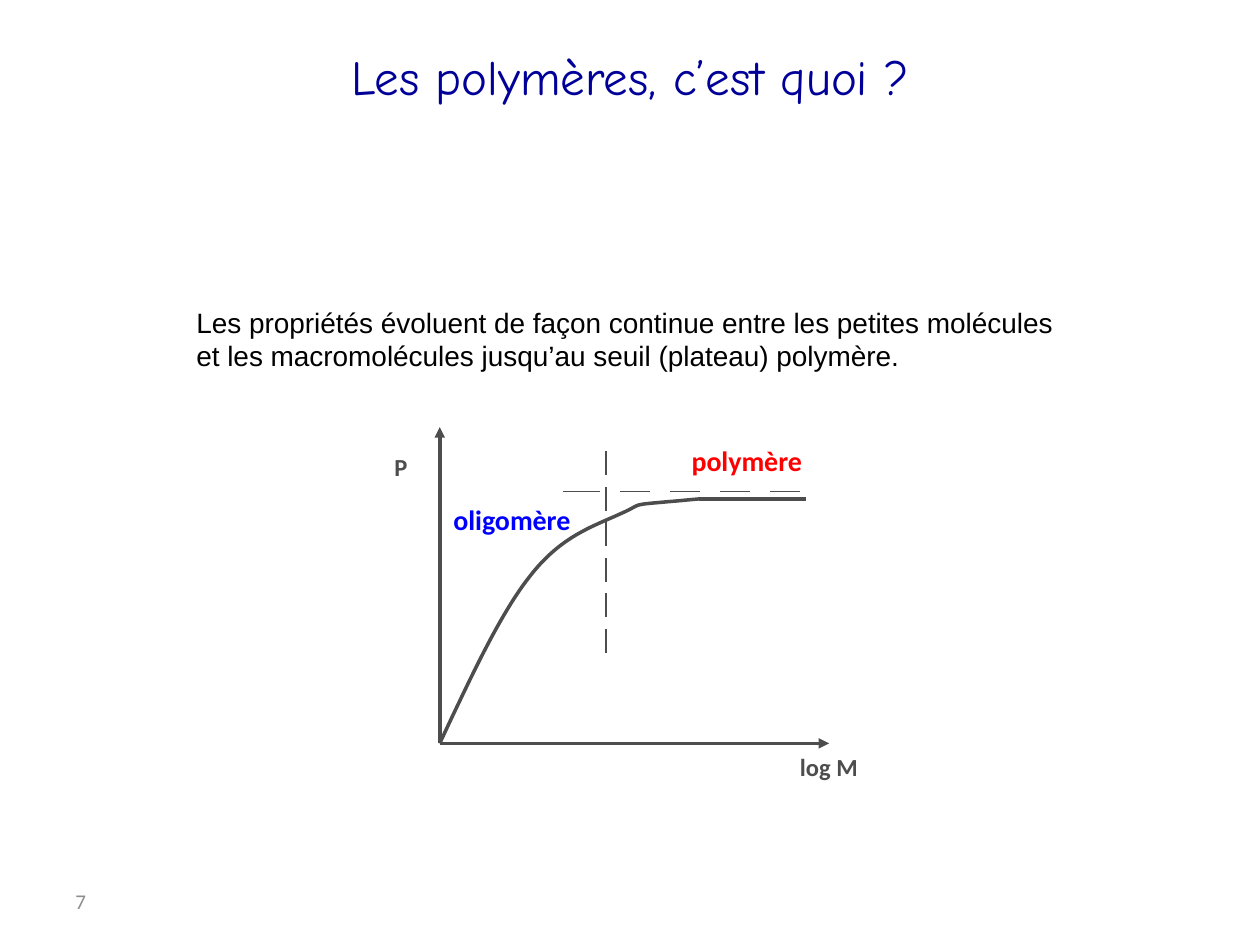
from dataclasses import dataclass

from lxml import etree
from pptx import Presentation
from pptx.dml.color import RGBColor
from pptx.enum import shapes, text
from pptx.oxml import ns
from pptx.util import Pt


@dataclass(frozen=True)
class Theme:
    gray = RGBColor(0x4D, 0x4D, 0x4D)
    pale = RGBColor(0x8C, 0x8C, 0x8C)
    navy = RGBColor(0x00, 0x00, 0x99)
    blue = RGBColor(0x00, 0x00, 0xFF)
    red = RGBColor(0xFF, 0x00, 0x00)
    black = RGBColor(0x00, 0x00, 0x00)
    title_size = Pt(28)
    body_size = Pt(16)
    axis_size = Pt(14)
    number_size = Pt(12)
    thick = Pt(2)
    thin = Pt(0.75)


THEME = Theme()
ORIGIN = (251.3, 424.8)
PLATEAU_START = (399.6, 285.1)
CURVE = [  # two control points and an end point per Bézier segment
    ((268.6, 388.1), (285.8, 350.6), (303.1, 329)),
    ((320.4, 306.7), (338.4, 301), (354.2, 293.8)),
    ((370.8, 286.6), (354.2, 289.4), PLATEAU_START),
]


def set_all(target, values):
    for name, value in values.items():
        setattr(target, name, value)


def format_text(box, words, size, color, font="Calibri", bold=False,
                align=text.PP_ALIGN.LEFT, anchor=text.MSO_ANCHOR.TOP, wrap=True):
    frame = box.text_frame
    set_all(frame, {
        "word_wrap": wrap, "vertical_anchor": anchor, "auto_size": text.MSO_AUTO_SIZE.NONE,
        "margin_left": Pt(7.2), "margin_right": Pt(7.2),
        "margin_top": Pt(3.6), "margin_bottom": Pt(3.6)})
    para = frame.paragraphs[0]
    para.alignment = align
    span = para.add_run()
    span.text = words
    set_all(span.font, {"size": size, "name": font, "bold": bold})
    span.font.color.rgb = color


def add_text(page, area, words, size, color, **options):
    box = page.shapes.add_textbox(*map(Pt, area))
    format_text(box, words, size, color, **options)


def add_title(page, area, words):
    title = page.shapes.title
    set_all(title, dict(zip(("left", "top", "width", "height"), map(Pt, area))))
    format_text(title, words, THEME.title_size, THEME.navy, font="Comic Neue",
                align=text.PP_ALIGN.CENTER, anchor=text.MSO_ANCHOR.MIDDLE)


def add_line(page, start, end, width, arrow=False):
    line = page.shapes.add_connector(shapes.MSO_CONNECTOR.STRAIGHT, *map(Pt, start + end))
    line.line.color.rgb = THEME.gray
    line.line.width = width
    if arrow:
        etree.SubElement(line.line._get_or_add_ln(), ns.qn("a:tailEnd"), type="triangle")
    etree.SubElement(line._element.spPr, ns.qn("a:effectLst"))


def bezier_points(start, segments, steps=24):
    for first, second, end in segments:
        corners = (start, first, second, end)
        for step in range(1, steps + 1):
            t = step / steps
            weights = ((1 - t) ** 3, 3 * t * (1 - t) ** 2, 3 * t * t * (1 - t), t ** 3)
            yield tuple(Pt(sum(w * corner[axis] for w, corner in zip(weights, corners)))
                        for axis in (0, 1))
        start = end


def add_curve(page, start, segments):
    builder = page.shapes.build_freeform(*map(Pt, start))
    builder.add_line_segments(bezier_points(start, segments), close=False)
    curve = builder.convert_to_shape()
    curve.shadow.inherit = False
    curve.fill.background()
    curve.line.color.rgb = THEME.gray
    curve.line.width = THEME.thick


def add_graph(page):
    # Axes
    for end in ((ORIGIN[0], 244.1), (473.8, ORIGIN[1])):
        add_line(page, ORIGIN, end, THEME.thick, arrow=True)

    # Property curve and its plateau
    add_curve(page, ORIGIN, CURVE)
    add_line(page, PLATEAU_START, (460.8, PLATEAU_START[1]), THEME.thick)

    # Dashed guides: plateau level and polymer threshold
    add_line(page, (321.8, 280.8), (342.7, 280.8), THEME.thin)
    for index in range(4):
        left = 354.2 + 28.6 * index
        add_line(page, (left, 280.8), (left + 17, 280.8), THEME.thin)
    for index in range(6):
        top = 257.8 + 20.3 * index
        add_line(page, (346.3, top), (346.3, top + 13.7), THEME.thin)

    # Labels
    for words, area, size, color in (
            ("oligomère", (252, 283.7, 85, 26.6), THEME.body_size, THEME.blue),
            ("polymère", (388.1, 249.8, 78.5, 26.6), THEME.body_size, THEME.red),
            ("P", (218.2, 254.9, 23, 23.8), THEME.axis_size, THEME.gray),
            ("log M", (450, 426.2, 49, 23.8), THEME.axis_size, THEME.gray)):
        add_text(page, area, words, size, color, bold=True, wrap=False)


def main():
    deck = Presentation()
    set_all(deck, {"slide_width": Pt(720), "slide_height": Pt(540)})
    page = deck.slides.add_slide(deck.slide_layouts[5])

    # Title, statement and page number
    add_title(page, (54, 20.9, 612, 44.6), "Les polymères, c’est quoi ?")
    add_text(page, (105.1, 169.2, 521.3, 49),
             "Les propriétés évoluent de façon continue entre les petites molécules "
             "et les macromolécules jusqu’au seuil (plateau) polymère.",
             THEME.body_size, THEME.black, font="Arial", anchor=text.MSO_ANCHOR.MIDDLE)
    add_text(page, (36, 500.4, 168, 28.8), "7", THEME.number_size, THEME.pale,
             anchor=text.MSO_ANCHOR.MIDDLE)

    add_graph(page)
    deck.save("out.pptx")


if __name__ == "__main__":
    main()
